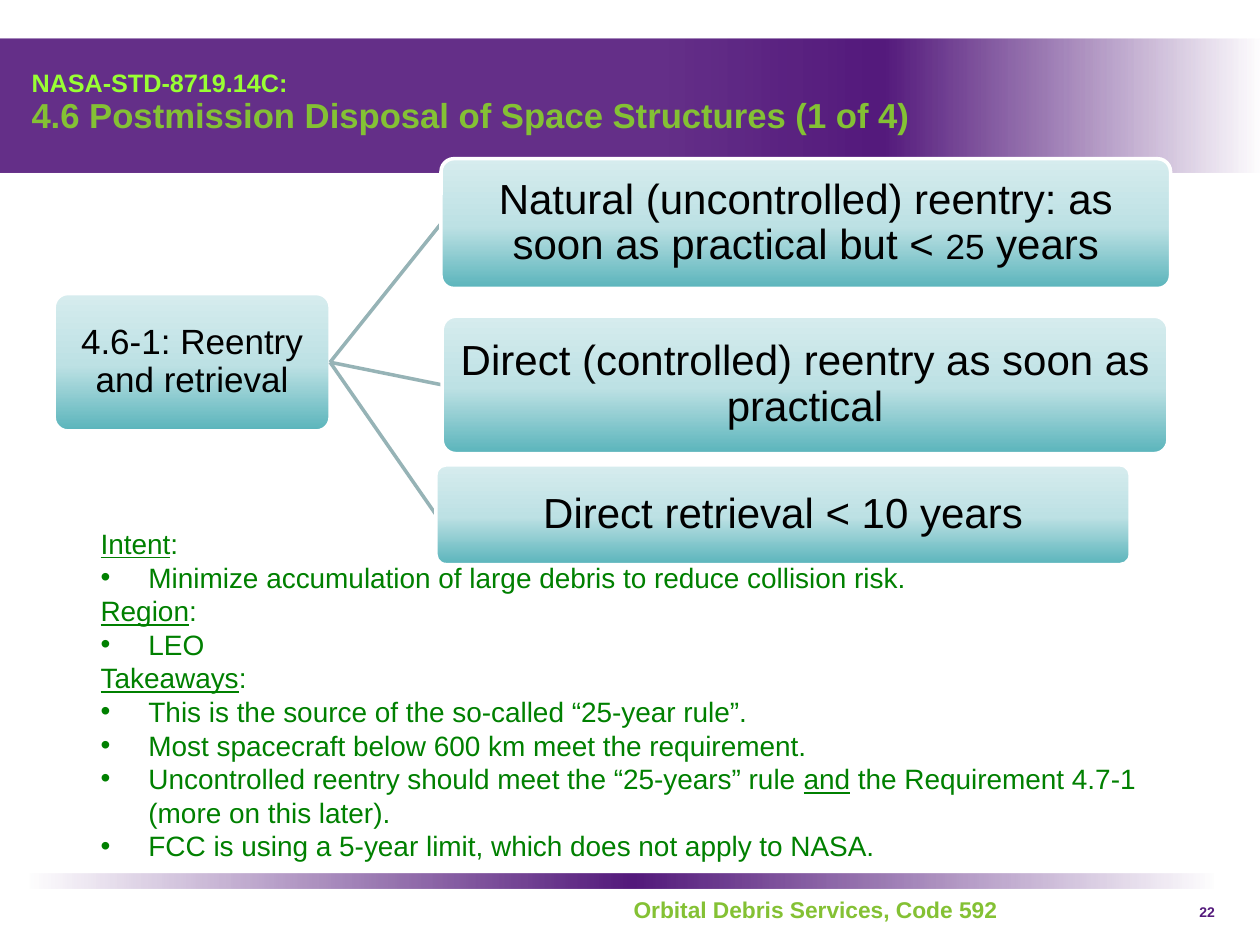
from lxml import etree
from pptx import Presentation
from pptx.dml.color import RGBColor
from pptx.enum.shapes import MSO_CONNECTOR, MSO_SHAPE
from pptx.enum.text import MSO_ANCHOR, PP_ALIGN
from pptx.oxml.ns import qn
from pptx.util import Inches, Pt

LEFT, CENTER, RIGHT = PP_ALIGN.LEFT, PP_ALIGN.CENTER, PP_ALIGN.RIGHT
MIDDLE, TOP = MSO_ANCHOR.MIDDLE, MSO_ANCHOR.TOP
RECTANGLE, ROUNDED = MSO_SHAPE.RECTANGLE, MSO_SHAPE.ROUNDED_RECTANGLE
STRAIGHT = MSO_CONNECTOR.STRAIGHT

THEME = {
    "font": "Arial",
    "purple": "541A7C", "green": "84C134", "lime": "99FF33",
    "body": "008000", "black": "000000", "white": "FFFFFF", "link": "96B3B6",
    "standard_size": 14.4, "title_size": 19.8, "body_size": 16,
    "root_size": 20, "option_size": 24, "footer_size": 13, "number_size": 8,
}
# Gradient stops: position in percent, colour, opacity in percent
BANNER_STOPS = [(53, THEME["purple"], 90), (70, THEME["purple"], 100), (100, THEME["purple"], 0)]
RULE_STOPS = [(0, THEME["purple"], 0), (51, THEME["purple"], 100), (100, THEME["purple"], 0)]
BOX_STOPS = [(0, "5AB4BB", 100), (48, "BDE1E4", 100), (100, "D6ECEE", 100)]


def add_gradient_shape(kind, place, stops, angle):
    shape = slide.shapes.add_shape(kind, *map(Inches, place))
    shape.shadow.inherit = False
    shape.line.fill.background()
    shape.fill.gradient()
    shape.fill.gradient_angle = angle
    stop_list = shape.element.spPr.find(".//" + qn("a:gsLst"))
    for old_stop in list(stop_list):
        stop_list.remove(old_stop)
    for position, color, opacity in stops:
        stop = etree.SubElement(stop_list, qn("a:gs"), pos=str(position * 1000))
        rgb = etree.SubElement(stop, qn("a:srgbClr"), val=color)
        etree.SubElement(rgb, qn("a:alpha"), val=str(opacity * 1000))
    return shape


def write_runs(paragraph, runs, color, size, bold=False):
    """Each run is a text with a dict of the font values that differ."""
    for text, changes in runs:
        run = paragraph.add_run()
        run.text = text
        values = {"name": THEME["font"], "size": Pt(size), "bold": bold, **changes}
        for name, value in values.items():
            setattr(run.font, name, value)
        run.font.color.rgb = RGBColor.from_string(color)


presentation = Presentation()
presentation.slide_width, presentation.slide_height = Inches(10), Inches(7.5)
slide = presentation.slides.add_slide(presentation.slide_layouts[5])

# Banner and footer rule, kept behind the title
title = slide.shapes.title
for place, stops in [((0, 0.31, 10, 1.06), BANNER_STOPS), ((0.23, 6.93, 9.41, 0.12), RULE_STOPS)]:
    band = add_gradient_shape(RECTANGLE, place, stops, 0)
    title.element.addprevious(band.element)

# Title
title.left, title.top, title.width, title.height = map(Inches, (0.15, 0.55, 7.5, 0.54))
title.text_frame.vertical_anchor = MIDDLE
title.text_frame.word_wrap = True
heading = title.text_frame.paragraphs[0]
heading.alignment, heading.line_spacing = LEFT, 0.9
write_runs(heading, [("NASA-STD-8719.14C:", {})], THEME["lime"], THEME["standard_size"], True)
heading.add_line_break()
write_runs(heading, [("4.6 Postmission Disposal of Space Structures (1 of 4)", {})],
           THEME["green"], THEME["title_size"], True)

# Footer and slide number
for text, place, color, size, alignment in [
    ("Orbital Debris Services, Code 592", (4.93, 7.06, 3.22, 0.36),
     THEME["green"], THEME["footer_size"], LEFT),
    ("22", (9.35, 7.12, 0.39, 0.25), THEME["purple"], THEME["number_size"], RIGHT),
]:
    frame = slide.shapes.add_textbox(*map(Inches, place)).text_frame
    frame.word_wrap = True
    frame.paragraphs[0].alignment = alignment
    write_runs(frame.paragraphs[0], [(text, {})], color, size, True)

# Intent, region and takeaways
underlined = {"underline": True}
sections = {
    "Intent": [[("Minimize accumulation of large debris to reduce collision risk.", {})]],
    "Region": [[("LEO", {})]],
    "Takeaways": [
        [("This is the source of the so-called “25-year rule”.", {})],
        [("Most spacecraft below 600 km meet the requirement.", {})],
        [("Uncontrolled reentry should meet the “25-years” rule ", {}), ("and", underlined),
         (" the Requirement 4.7-1 (more on this later).", {})],
        [("FCC is using a 5-year limit, which does not apply to NASA.", {})],
    ],
}
lines = []
for name, points in sections.items():
    lines.append((False, [(name, underlined), (":", {})]))
    lines += [(True, runs) for runs in points]

frame = slide.shapes.add_textbox(*map(Inches, (0.7, 4.13, 8.59, 3))).text_frame
frame.word_wrap = True
frame.vertical_anchor = TOP
for index, (bulleted, runs) in enumerate(lines):
    paragraph = frame.add_paragraph() if index else frame.paragraphs[0]
    write_runs(paragraph, runs, THEME["body"], THEME["body_size"])
    if bulleted:
        properties = paragraph._p.get_or_add_pPr()
        properties.set("marL", str(Inches(0.38)))
        properties.set("indent", str(-Inches(0.38)))
        etree.SubElement(properties, qn("a:buFont"), typeface=THEME["font"])
        etree.SubElement(properties, qn("a:buChar"), char="•")

# Requirement tree: the root, then its options, each joined to the root
root_place = (0.43, 2.33, 2.19, 1.09)
boxes = [
    (root_place, THEME["root_size"], [("4.6-1: Reentry and retrieval", {})]),
    ((3.5, 1.26, 5.79, 1.03), THEME["option_size"],
     [("Natural (uncontrolled) reentry: as soon as practical but < ", {}),
      ("25", {"size": Pt(THEME["root_size"])}), (" years", {})]),
    ((3.51, 2.51, 5.76, 1.09), THEME["option_size"],
     [("Direct (controlled) reentry as soon as practical", {})]),
    ((3.46, 3.69, 5.51, 0.79), THEME["option_size"], [("Direct retrieval < 10 years", {})]),
]
for place, size, runs in boxes:
    left, top, width, height = place
    if place != root_place:
        start = (root_place[0] + root_place[2], root_place[1] + root_place[3] / 2)
        link = slide.shapes.add_connector(STRAIGHT, *map(Inches, (*start, left, top + height / 2)))
        link.line.color.rgb = RGBColor.from_string(THEME["link"])
        link.line.width = Pt(2)
        etree.SubElement(link.element.spPr, qn("a:effectLst"))
    box = add_gradient_shape(ROUNDED, place, BOX_STOPS, 90)
    box.adjustments[0] = 0.1
    box.line.color.rgb = RGBColor.from_string(THEME["white"])
    box.line.width = Pt(2)
    frame = box.text_frame
    frame.word_wrap = True
    frame.vertical_anchor = MIDDLE
    for side in ("left", "right", "top", "bottom"):
        setattr(frame, "margin_" + side, Inches(0.04))
    paragraph = frame.paragraphs[0]
    paragraph.alignment, paragraph.line_spacing = CENTER, 0.9
    write_runs(paragraph, runs, THEME["black"], size)

presentation.save("out.pptx")
